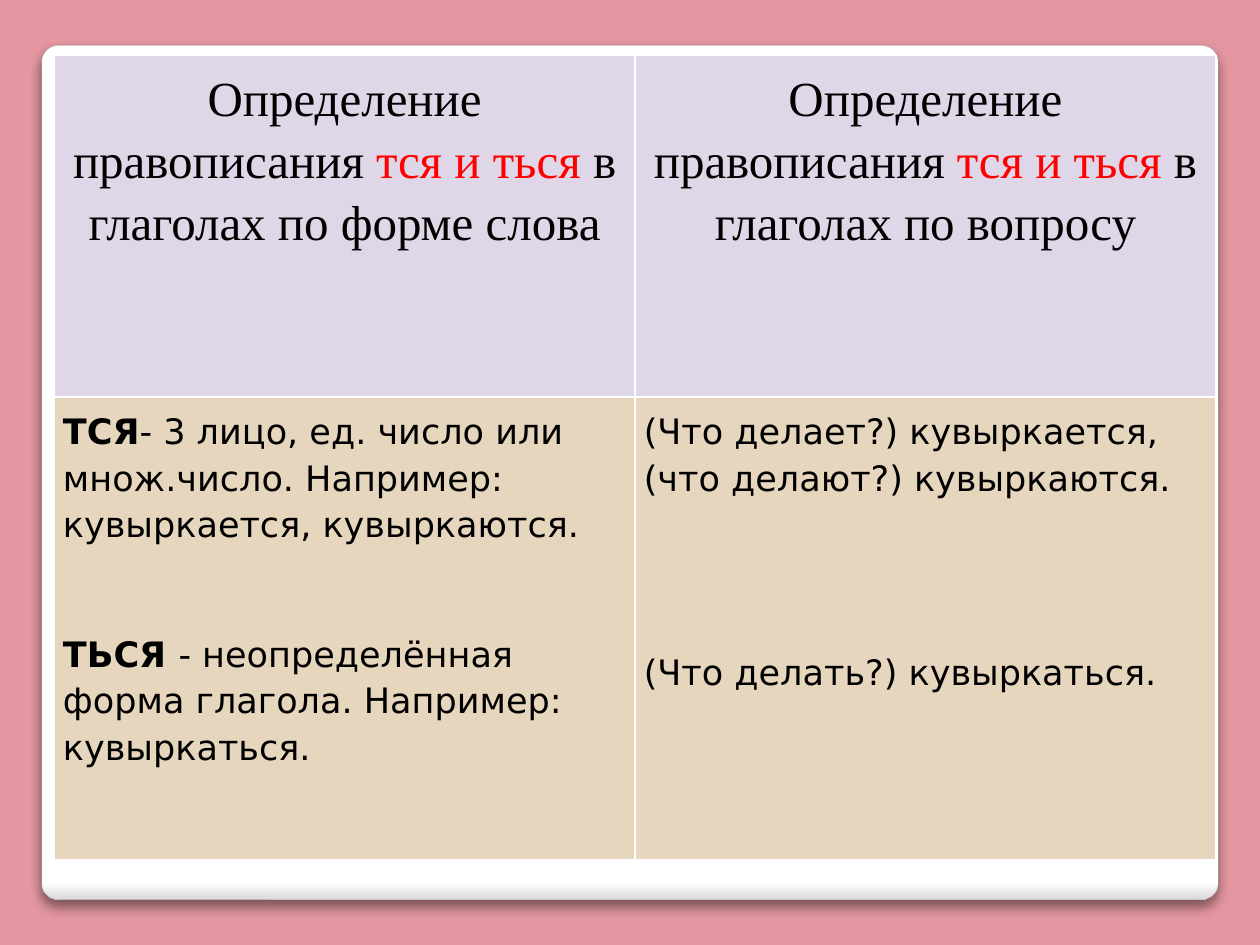
from lxml import etree
from pptx import Presentation
from pptx.dml.color import RGBColor
from pptx.enum.shapes import MSO_SHAPE as Shape
from pptx.enum.text import PP_ALIGN as Align
from pptx.oxml import parse_xml
from pptx.util import Inches, Pt

NS = 'xmlns:a="http://schemas.openxmlformats.org/drawingml/2006/main"'
BLACK, RED, WHITE = "000000", "FF0000", "FFFFFF"

# Content: each cell is a list of (space before, runs); a run is (text, colour, bold)
heads = [
    [(0, [("Определение правописания ", BLACK, False),
          ("тся и ться", RED, False),
          (f" в глаголах по {way}", BLACK, False)])]
    for way in ("форме слова", "вопросу")
]
rules = [
    [(0, [("ТСЯ", BLACK, True),
          ("- 3 лицо, ед. число или множ.число. Например: "
           "кувыркается, кувыркаются.", BLACK, False)]),
     (37, [("ТЬСЯ ", BLACK, True),
           ("- неопределённая форма глагола. Например: "
            "кувыркаться.", BLACK, False)])],
    [(0, [("(Что делает?) кувыркается, (что делают?) кувыркаются.",
           BLACK, False)]),
     (74, [("(Что делать?) кувыркаться.", BLACK, False)])],
]
# Rows: cells, height, fill, font, size, alignment
rows = [
    (heads, 2.71, "DFD7E7", "Times New Roman", 28, Align.CENTER),
    (rules, 3.67, "E6D6BD", "DejaVu Sans", 20, Align.LEFT),
]
WIDE, HIGH = 10, 7.5
EDGE, TOP = 0.33, 0.36
LEFT, HEAD, COL, PAD = 0.43, 0.44, 4.61, 0.07


def paint(fill, tone):
    fill.solid()
    fill.fore_color.rgb = RGBColor.from_string(tone)


def border(cell):
    props = cell._tc.get_or_add_tcPr()
    for i, side in enumerate("LRTB"):
        props.insert(i, parse_xml(
            f'<a:ln{side} {NS} w="12700"><a:solidFill><a:srgbClr val="{WHITE}"/>'
            f'</a:solidFill></a:ln{side}>'))


def write(frame, paras, font, size, align):
    for i, (gap, runs) in enumerate(paras):
        para = frame.add_paragraph() if i else frame.paragraphs[0]
        para.alignment, para.line_spacing = align, 1.15
        para.space_before, para.space_after = Pt(gap), Pt(10)
        para.font.name, para.font.size = font, Pt(size)
        for text, tone, bold in runs:
            run = para.add_run()
            run.text, run.font.bold = text, bold
            run.font.name, run.font.size = font, Pt(size)
            run.font.color.rgb = RGBColor.from_string(tone)


deck = Presentation()
deck.slide_width, deck.slide_height = Inches(WIDE), Inches(HIGH)
slide = deck.slides.add_slide(deck.slide_layouts[6])
paint(slide.background.fill, "E497A0")

# Rounded white panel with a soft shadow
panel = slide.shapes.add_shape(
    Shape.ROUNDED_RECTANGLE, Inches(EDGE), Inches(TOP),
    Inches(WIDE - 2 * EDGE), Inches(HIGH - 2 * TOP))
panel.adjustments[0] = 0.02
panel.fill.gradient()
panel.fill.gradient_angle = 270
for stop, (tone, place) in zip(panel.fill.gradient_stops,
                               [(WHITE, 0.98), ("DADADA", 1)]):
    stop.color.rgb, stop.position = RGBColor.from_string(tone), place
paint(panel.line.fill, "A4A4A4")
panel.line.width = Pt(0.16)
panel.shadow.inherit = False
glow = panel._element.spPr.find("{*}effectLst")
glow.append(etree.fromstring(
    f'<a:outerShdw {NS} blurRad="{Pt(6)}" dist="{Pt(4)}" dir="5400000" '
    'rotWithShape="0"><a:srgbClr val="000000"><a:alpha val="44000"/>'
    '</a:srgbClr></a:outerShdw>'))

# Table of two ways to choose the spelling
tall = sum(row[1] for row in rows)
table = slide.shapes.add_table(
    len(rows), len(heads), Inches(LEFT), Inches(HEAD),
    Inches(COL * len(heads)), Inches(tall)).table
table.first_row = table.horz_banding = False
for r, (cells, high, tone, font, size, align) in enumerate(rows):
    table.rows[r].height = Inches(high)
    for c, paras in enumerate(cells):
        cell = table.cell(r, c)
        cell.margin_left = cell.margin_right = Inches(PAD)
        cell.margin_top = cell.margin_bottom = Inches(PAD)
        paint(cell.fill, tone)
        border(cell)
        write(cell.text_frame, paras, font, size, align)

deck.save("out.pptx")
